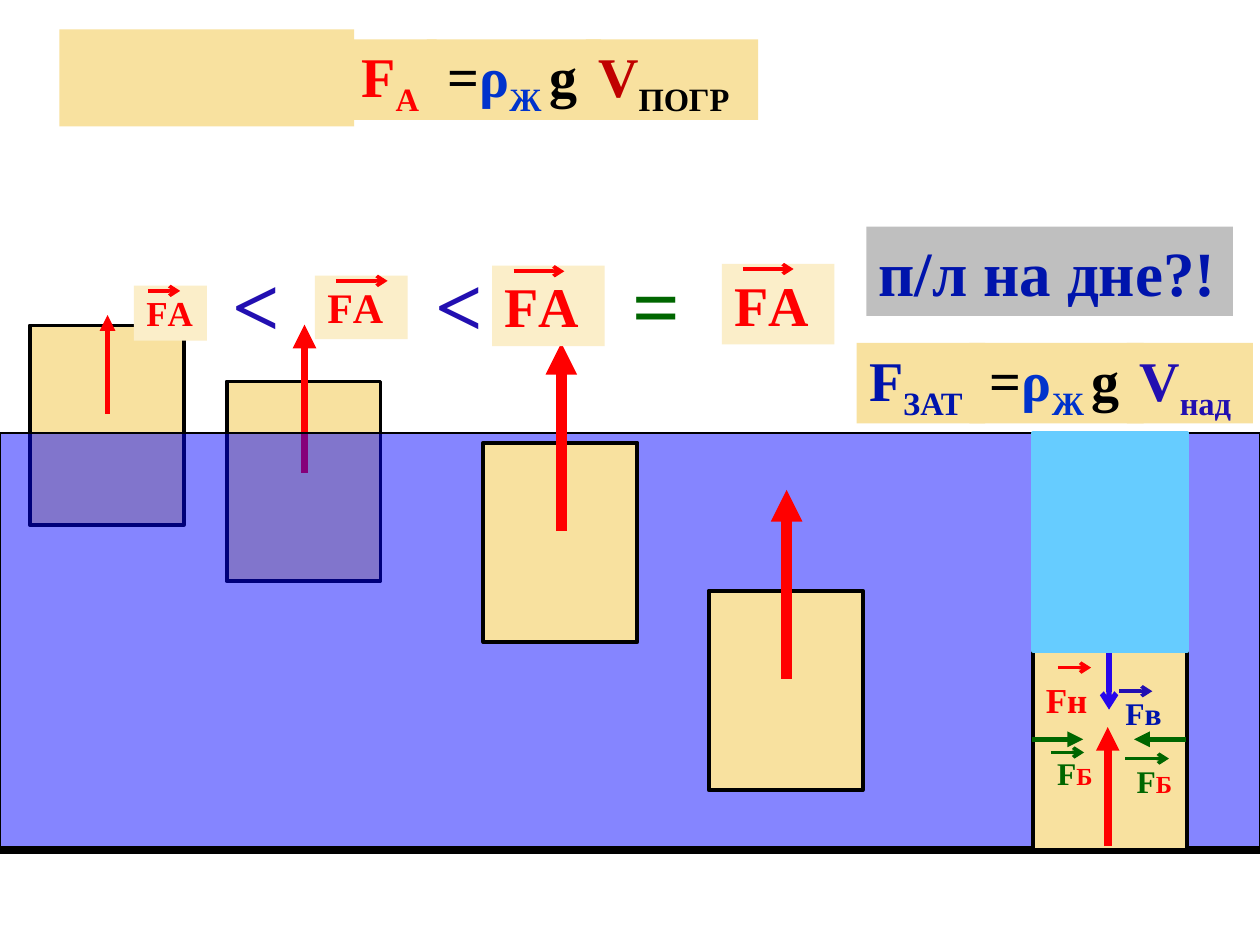
import pptx
import pptx.util
import pptx.dml.color
import pptx.enum.shapes
import pptx.enum.text
import pptx.oxml.ns
from dataclasses import dataclass
from lxml import etree

Pt = pptx.util.Pt
qn = pptx.oxml.ns.qn


@dataclass(frozen=True)
class Theme:
    font: str = "Times New Roman"
    black: str = "000000"
    red: str = "FF0000"
    dark_red: str = "C00000"
    green: str = "006600"
    blue: str = "0033CC"
    navy: str = "0014AC"
    violet: str = "220FB1"
    pressure: str = "2706EC"
    sand: str = "F8E19F"
    cream: str = "FBEEC9"
    grey: str = "BFBFBF"
    sky: str = "66CCFF"
    water: str = "0000FF"
    operator: int = 48
    question: int = 36
    formula: int = 32
    medium: int = 24
    label: int = 20
    small: int = 18
    tiny: int = 14


T = Theme()
BLOCK_W, BLOCK_H = 88, 114
FORMULA_H = 46


def rgb(value):
    return pptx.dml.color.RGBColor.from_string(value)


def add_rect(shapes, x, y, w, h, fill, line=None, width=2.25, alpha=None):
    sp = shapes.add_shape(pptx.enum.shapes.MSO_SHAPE.RECTANGLE,
                          Pt(x), Pt(y), Pt(w), Pt(h))
    sp.shadow.inherit = False
    sp.fill.solid()
    sp.fill.fore_color.rgb = rgb(fill)
    if alpha:
        color = sp._element.spPr.find(qn("a:solidFill"))[0]
        etree.SubElement(color, qn("a:alpha")).set("val", str(alpha * 1000))
    if line:
        sp.line.color.rgb = rgb(line)
        sp.line.width = Pt(width)
    else:
        sp.line.fill.background()
    return sp


def add_line(shapes, x1, y1, x2, y2, color, width, head=None):
    cx = shapes.add_connector(pptx.enum.shapes.MSO_CONNECTOR.STRAIGHT,
                              Pt(x1), Pt(y1), Pt(x2), Pt(y2))
    cx.line.color.rgb = rgb(color)
    cx.line.width = Pt(width)
    if head:
        ln = cx._element.spPr.find(qn("a:ln"))
        etree.SubElement(ln, qn("a:tailEnd")).set("type", head)
    etree.SubElement(cx._element.spPr, qn("a:effectLst"))


def add_text(shapes, x, y, w, h, runs, fill=None, middle=False):
    """Write runs of (text, size, colour, subscript) in a box."""
    if fill:
        sp = add_rect(shapes, x, y, w, h, fill)
    else:
        sp = shapes.add_textbox(Pt(x), Pt(y), Pt(w), Pt(h))
    tf = sp.text_frame
    tf.word_wrap = True
    anchor = pptx.enum.text.MSO_ANCHOR
    tf.vertical_anchor = anchor.MIDDLE if middle else anchor.TOP
    p = tf.paragraphs[0]
    p.alignment = pptx.enum.text.PP_ALIGN.LEFT
    for text, size, color, subscript in runs:
        r = p.add_run()
        r.text = text
        r.font.name = T.font
        r.font.size = Pt(size)
        r.font.bold = True
        r.font.color.rgb = rgb(color)
        if subscript:
            r.font._element.set("baseline", "-25000")


def add_vector_label(s, box, runs, arrow, color, fill=None):
    """Group a force name with the short arrow (x, y, length) above it."""
    shapes = s.shapes.add_group_shape().shapes
    add_text(shapes, *box, runs, fill)
    x, y, length = arrow
    add_line(shapes, x, y, x + length, y, color, 2, "arrow")


def add_buoyancy_label(s, box, size, arrow):
    add_vector_label(s, box, [("FА", size, T.red, False)], arrow, T.red, T.cream)


def add_block(s, x, y):
    add_rect(s.shapes, x, y, BLOCK_W, BLOCK_H, T.sand, T.black)


def add_floating_block(s, x, y, bottom, top, width):
    add_block(s, x, y)
    cx = x + BLOCK_W / 2 + 0.5
    add_line(s.shapes, cx, bottom, cx, top, T.red, width, "triangle")


def add_formula(s, y, force, force_box, middle_x, volume, volume_box):
    """Lay out force = density * g * volume in three adjoining boxes."""
    rho_g = [(" ", T.formula, T.black, True), ("=", T.formula, T.black, False),
             ("ρ", T.formula, T.blue, False), ("Ж ", T.formula, T.blue, True),
             ("g", T.formula, T.black, False)]
    for (x, w), runs in ((force_box, force), ((middle_x, 99.5), rho_g),
                         (volume_box, volume)):
        add_text(s.shapes, x, y, w, FORMULA_H, runs, T.sand, True)


def symbol(letter, index, color, index_color=None):
    return [(letter, T.formula, color, False),
            (index, T.formula, index_color or color, True)]


def add_water(s):
    shapes = s.shapes.add_group_shape().shapes
    add_rect(shapes, 0, 247.5, 720, 236.5, T.water, T.black, 0.75, alpha=48)
    add_line(shapes, 0, 486, 720, 486, T.black, 4.5)


def add_sunken_block(s):
    add_block(s, 590.5, 371.5)
    add_line(s.shapes, 633.75, 371.5, 633.75, 405.5, T.pressure, 3, "arrow")
    for start, end in ((589.75, 619), (678, 648)):
        add_line(s.shapes, start, 422.5, end, 422.5, T.green, 3, "triangle")
    side = [("F", T.small, T.green, False), ("Б", T.tiny, T.red, False)]
    add_vector_label(s, (642.5, 432, 41, 28.8), side, (643, 433.5, 25), T.green)
    add_vector_label(s, (597, 427.5, 41, 28.8), side, (600.5, 430, 19), T.green)
    add_vector_label(s, (636, 393, 42, 28.8), [("Fв", T.small, T.navy, False)],
                     (639.5, 395, 19), T.violet)
    add_vector_label(s, (590.5, 384, 42, 31.5), [("Fн", T.label, T.red, False)],
                     (604.5, 381.5, 19), T.red)
    add_line(s.shapes, 633, 483.5, 633, 415.5, T.red, 4.5, "triangle")
    add_rect(s.shapes, 590.5, 247.5, BLOCK_W, 124.5, T.sky, T.sky)


def main():
    prs = pptx.Presentation()
    prs.slide_width, prs.slide_height = Pt(720), Pt(540)
    s = prs.slides.add_slide(prs.slide_layouts[6])

    add_floating_block(s, 17, 186, 236.5, 180, 3)
    add_buoyancy_label(s, (76.5, 163.25, 41.75, 31.5), T.label, (84.5, 166.25, 18.5))
    add_floating_block(s, 129.5, 218, 270, 185.5, 4.5)
    add_buoyancy_label(s, (180, 157.5, 53, 36.25), T.medium, (192, 160.5, 29.5))
    add_water(s)
    add_floating_block(s, 276.25, 253, 303.5, 196, 6)
    add_buoyancy_label(s, (281.25, 151.75, 64.25, FORMULA_H), T.formula, (293.5, 155, 29))
    add_floating_block(s, 405, 337.5, 388, 280, 6)
    add_buoyancy_label(s, (412.5, 150.75, 64.25, FORMULA_H), T.formula, (424.5, 153.75, 29))

    for x, sign, color in ((125.5, "<", T.violet), (242, "<", T.violet),
                           (354.5, "=", T.green)):
        add_text(s.shapes, x, 140.5, 39.5, 65.5, [(sign, T.operator, color, False)])

    add_sunken_block(s)
    add_formula(s, 22.5, symbol("F", "A", T.red), (199.5, 50), 244,
                symbol("V", "ПОГР", T.dark_red, T.black), (334.75, 98.5))
    add_formula(s, 196, symbol("F", "ЗАТ", T.navy), (489.5, 73.5), 554,
                symbol("V", "над", T.violet), (644, 72))
    add_text(s.shapes, 495, 129.5, 209.5, 51,
             [("п/л на дне?!", T.question, T.navy, False)], T.grey, True)
    add_rect(s.shapes, 34, 16.75, 168.5, 55.5, T.sand)

    prs.save("out.pptx")


if __name__ == "__main__":
    main()
